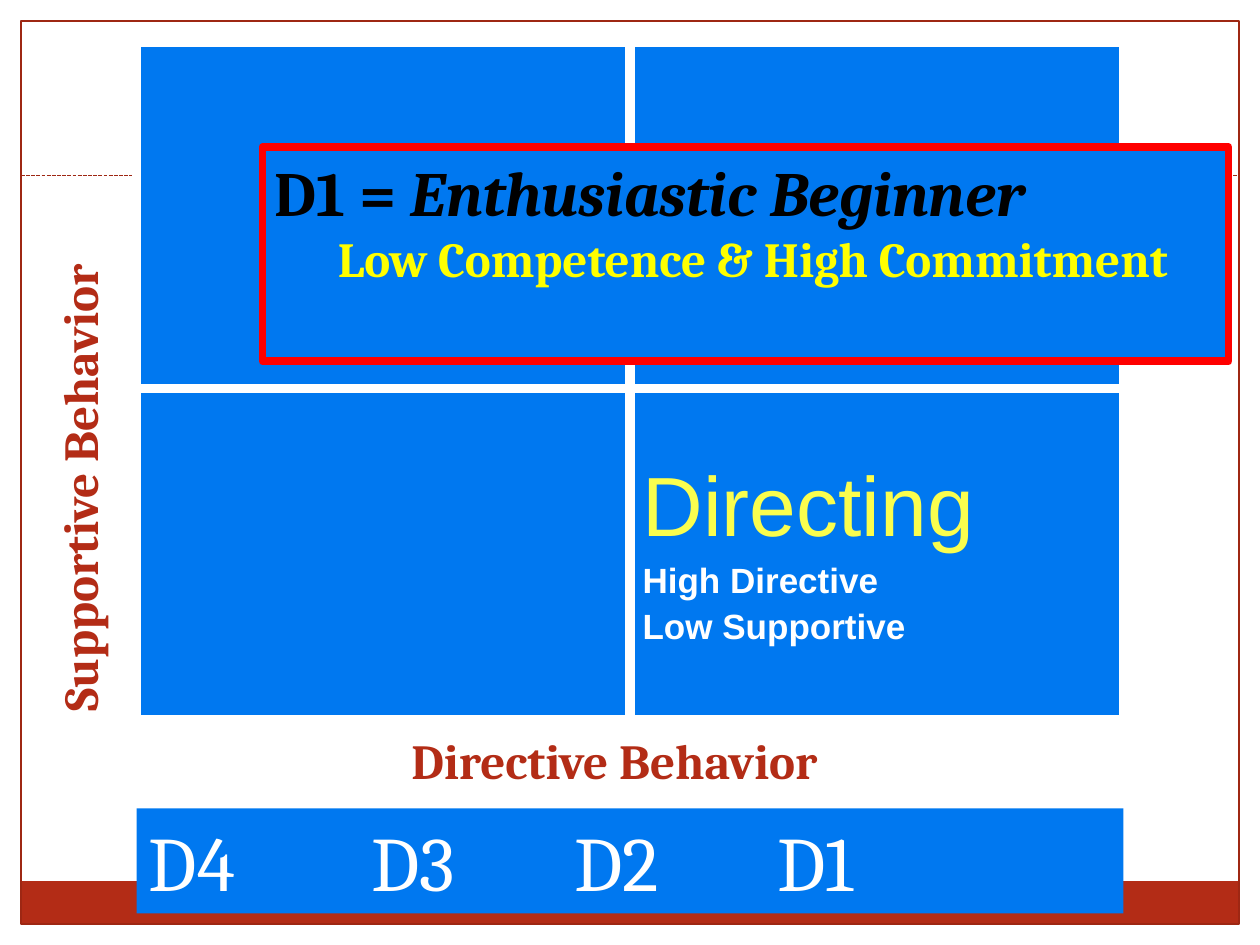
from dataclasses import dataclass
from typing import Optional

from lxml import etree
from pptx import Presentation
from pptx.dml.color import RGBColor
from pptx.enum.dml import MSO_LINE
from pptx.enum.shapes import MSO_CONNECTOR, MSO_SHAPE
from pptx.enum.text import MSO_ANCHOR, PP_ALIGN
from pptx.oxml.ns import qn
from pptx.util import Pt

RECTANGLE = MSO_SHAPE.RECTANGLE
STRAIGHT = MSO_CONNECTOR.STRAIGHT
SYSTEM_DASH = MSO_LINE.SQUARE_DOT
LEFT = PP_ALIGN.LEFT
TOP, MIDDLE = MSO_ANCHOR.TOP, MSO_ANCHOR.MIDDLE

WHITE = RGBColor(0xFF, 0xFF, 0xFF)
BLACK = RGBColor(0x00, 0x00, 0x00)
BLUE = RGBColor(0x00, 0x78, 0xF0)
RUST = RGBColor(0xB3, 0x2C, 0x16)
DARK_RUST = RGBColor(0x9E, 0x27, 0x13)
RED = RGBColor(0xFF, 0x00, 0x00)
YELLOW = RGBColor(0xFF, 0xFF, 0x00)
PALE_YELLOW = RGBColor(0xFA, 0xFE, 0x4E)

SERIF, SANS = "Cambria", "Arial"
GRID_LEFT, GRID_TOP, GRID_WIDTH = 78, 24, 564
ROW_HEIGHTS = (198, 189)
LEVELS = ("D4", "D3", "D2", "D1")
FIRST_LEVEL_TAB, LEVEL_STEP = 127, 116


@dataclass(frozen=True)
class Box:
    left: float
    top: float
    width: float
    height: float

    def lengths(self) -> tuple:
        return Pt(self.left), Pt(self.top), Pt(self.width), Pt(self.height)


@dataclass(frozen=True)
class TextStyle:
    size: float
    color: RGBColor
    font: str = SERIF
    bold: bool = False
    italic: bool = False


@dataclass(frozen=True)
class AxisLabel:
    text: str
    box: Box
    rotation: float = 0


@dataclass(frozen=True)
class StyleLine:
    text: str
    style: TextStyle
    space_before: float


AXIS_STYLE = TextStyle(28, RUST, bold=True)
DETAIL_STYLE = TextStyle(20, WHITE, SANS, bold=True)
AXIS_LABELS = (
    AxisLabel("Directive Behavior", Box(228, 414, 336, 41)),
    AxisLabel("Supportive Behavior", Box(-120, 228, 330, 41), 270),
)
DIRECTING_LINES = (
    StyleLine("Directing", TextStyle(48, PALE_YELLOW, SANS), 9.6),
    StyleLine("High Directive", DETAIL_STYLE, 4),
    StyleLine("Low Supportive", DETAIL_STYLE, 4),
)


def add_run(paragraph, text: str, style: TextStyle) -> None:
    run = paragraph.add_run()
    run.text = text
    font = run.font
    font.name, font.size = style.font, Pt(style.size)
    font.bold, font.italic = style.bold, style.italic
    font.color.rgb = style.color


def add_panel(slide, box: Box, fill: Optional[RGBColor] = None,
              line: Optional[RGBColor] = None, line_width: float = 0.75):
    panel = slide.shapes.add_shape(RECTANGLE, *box.lengths())
    panel.shadow.inherit = False
    if fill is None:
        panel.fill.background()
    else:
        panel.fill.solid()
        panel.fill.fore_color.rgb = fill
    if line is None:
        panel.line.fill.background()
    else:
        panel.line.color.rgb = line
        panel.line.width = Pt(line_width)
    panel.text_frame.word_wrap = True
    panel.text_frame.vertical_anchor = TOP
    panel.text_frame.paragraphs[0].alignment = LEFT
    return panel


def add_page_frame(slide) -> None:
    add_panel(slide, Box(12, 503.5, 695.5, 24.5), RUST)
    add_panel(slide, Box(12, 12, 696, 516), line=DARK_RUST)
    rule = slide.shapes.add_connector(STRAIGHT, Pt(12), Pt(100.5), Pt(708), Pt(100.5))
    rule.line.color.rgb = DARK_RUST
    rule.line.width = Pt(0.75)
    rule.line.dash_style = SYSTEM_DASH
    etree.SubElement(rule._element.spPr, qn("a:effectLst"))


def set_cell_borders(cell, color: RGBColor, width: float) -> None:
    properties = cell._tc.get_or_add_tcPr()
    for side in ("lnL", "lnR", "lnT", "lnB"):
        border = etree.SubElement(properties, qn(f"a:{side}"), w=str(Pt(width)))
        fill = etree.SubElement(border, qn("a:solidFill"))
        etree.SubElement(fill, qn("a:srgbClr"), val=str(color))


def add_behavior_grid(slide) -> None:
    box = Box(GRID_LEFT, GRID_TOP, GRID_WIDTH, sum(ROW_HEIGHTS))
    grid = slide.shapes.add_table(2, 2, *box.lengths()).table
    for row, height in zip(grid.rows, ROW_HEIGHTS):
        row.height = Pt(height)
    for cell in grid.iter_cells():
        set_cell_borders(cell, WHITE, 6)
        cell.fill.solid()
        cell.fill.fore_color.rgb = BLUE

    directing = grid.cell(1, 1)
    directing.vertical_anchor = MIDDLE
    frame = directing.text_frame
    for index, line in enumerate(DIRECTING_LINES):
        paragraph = frame.add_paragraph() if index else frame.paragraphs[0]
        paragraph.space_before = Pt(line.space_before)
        add_run(paragraph, line.text, line.style)


def add_level_bar(slide) -> None:
    bar = add_panel(slide, Box(GRID_LEFT, 462, GRID_WIDTH, 60), BLUE)
    paragraph = bar.text_frame.paragraphs[0]
    add_run(paragraph, "\t".join(LEVELS), TextStyle(44, WHITE))
    tabs = etree.SubElement(paragraph._p.get_or_add_pPr(), qn("a:tabLst"))
    for index in range(len(LEVELS) - 1):
        position = Pt(FIRST_LEVEL_TAB + index * LEVEL_STEP)
        etree.SubElement(tabs, qn("a:tab"), pos=str(position), algn="l")


def add_axis_label(slide, label: AxisLabel) -> None:
    text_box = slide.shapes.add_textbox(*label.box.lengths())
    text_box.rotation = label.rotation
    text_box.text_frame.word_wrap = True
    add_run(text_box.text_frame.paragraphs[0], label.text, AXIS_STYLE)


def add_beginner_callout(slide) -> None:
    callout = add_panel(slide, Box(150, 84, 552, 122.5), BLUE, RED, 4.5)
    heading = callout.text_frame.paragraphs[0]
    add_run(heading, "D1 = ", TextStyle(36, BLACK, bold=True))
    add_run(heading, "Enthusiastic Beginner",
            TextStyle(36, BLACK, bold=True, italic=True))
    traits = callout.text_frame.add_paragraph()
    traits.alignment = LEFT
    traits.level = 1
    traits._p.get_or_add_pPr().set("marL", str(Pt(36)))
    traits._p.get_or_add_pPr().set("indent", "0")
    add_run(traits, "Low Competence & High Commitment",
            TextStyle(28, YELLOW, bold=True))


def main() -> None:
    presentation = Presentation()
    presentation.slide_width, presentation.slide_height = Pt(720), Pt(540)
    slide = presentation.slides.add_slide(presentation.slide_layouts[6])
    add_page_frame(slide)
    add_behavior_grid(slide)
    add_level_bar(slide)
    for label in AXIS_LABELS:
        add_axis_label(slide, label)
    add_beginner_callout(slide)
    presentation.save("out.pptx")


if __name__ == "__main__":
    main()
